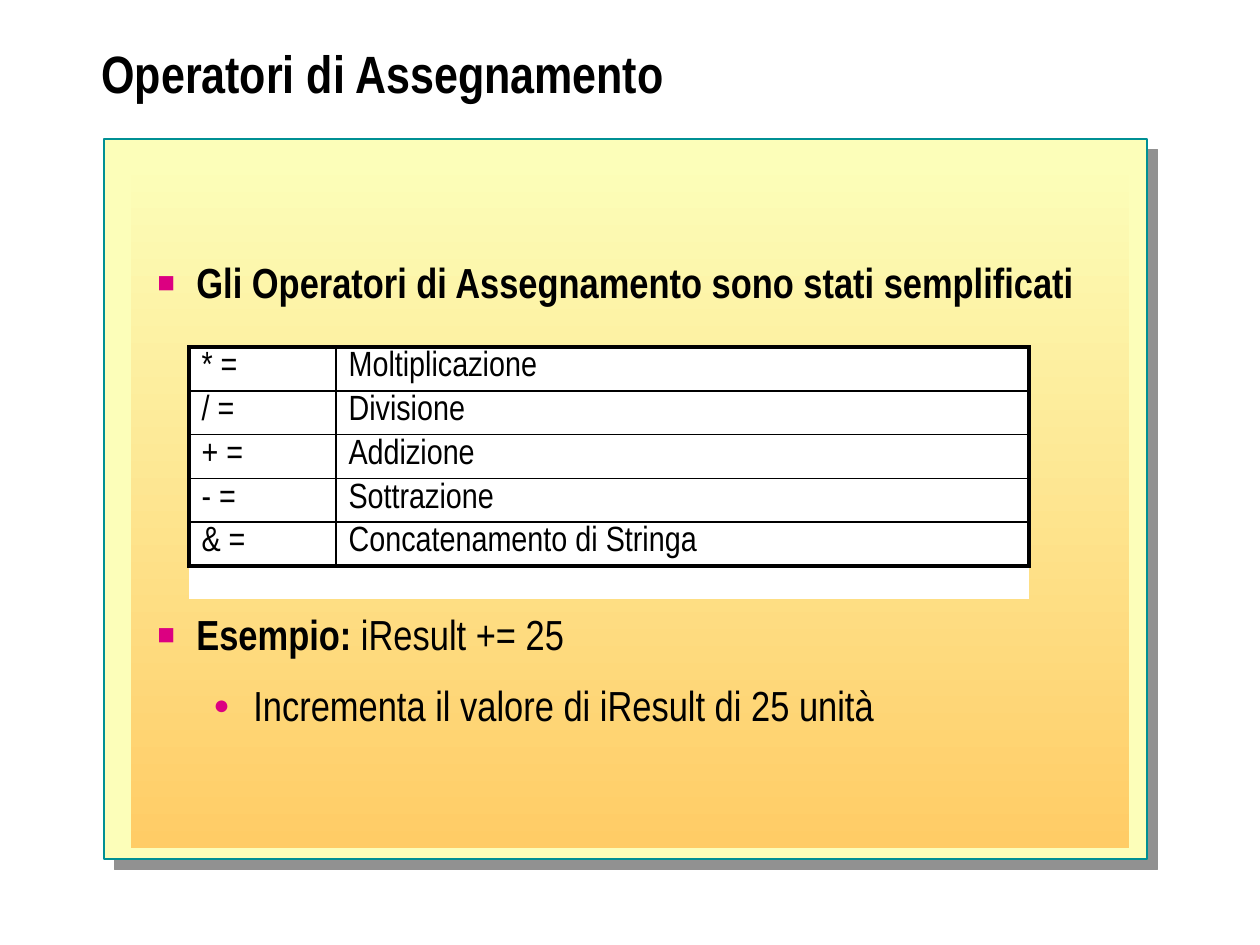
"""Build a slide on assignment operators."""
from lxml import etree
from pptx import Presentation
from pptx import util as u
from pptx.dml.color import RGBColor
from pptx.enum import shapes, text
from pptx.oxml import ns

SCALE = 914400 / 126
FONT = "Arial Narrow"
BULLET_FONT = "Arial"
COLORS = {
    "black": "000000",
    "white": "FFFFFF",
    "cream": "FCFEB9",
    "orange": "FFCC66",
    "teal": "009094",
    "gray": "919191",
    "magenta": "DC0081",
}
OPERATORS = [
    ("* =", "Moltiplicazione"),
    ("/ =", "Divisione"),
    ("+ =", "Addizione"),
    ("- =", "Sottrazione"),
    ("& =", "Concatenamento di Stringa"),
]
COLUMNS = (147, 693)
ROW = 42
BULLETS = [
    ([("Gli Operatori di Assegnamento sono stati semplificati", True)], 0, 0),
    ([("Esempio: ", True), ("iResult += 25", False)], 0, 307),
    ([("Incrementa il valore di iResult di 25 unità", False)], 1, 25),
]
BULLET_STYLES = [("■", 70, 39, -39), ("●", 65, 96, -40)]


def px(value):
    return u.Emu(round(value * SCALE))


def rgb(name):
    return RGBColor.from_string(COLORS[name])


def child(parent, tag, **attributes):
    return etree.SubElement(parent, ns.qn(tag), attributes)


def add_panel(page, place, fill, line=None, end=None):
    panel = page.shapes.add_shape(shapes.MSO_SHAPE.RECTANGLE, *map(px, place))
    panel.shadow.inherit = False
    if end:
        panel.fill.gradient()
        panel.fill.gradient_angle = 270
        for stop, name, position in zip(panel.fill.gradient_stops, (fill, end), (0, 1)):
            stop.color.rgb = rgb(name)
            stop.position = position
    else:
        panel.fill.solid()
        panel.fill.fore_color.rgb = rgb(fill)
    if line:
        panel.line.color.rgb = rgb(line)
        panel.line.width = u.Pt(1)
    else:
        panel.line.fill.background()
    return panel


def drop_shadow(panel):
    effects = panel._element.spPr.find(ns.qn("a:effectLst"))
    shadow = child(effects, "a:outerShdw", blurRad="0", dist=str(u.Pt(8.5)),
                   dir="2700000", algn="ctr", rotWithShape="0")
    child(shadow, "a:srgbClr", val=COLORS["gray"])


def style_span(span, size, bold=False):
    span.font.name = FONT
    span.font.size = u.Pt(size)
    span.font.bold = bold
    span.font.color.rgb = rgb("black")


def add_box(page, place, anchor):
    box = page.shapes.add_textbox(*map(px, place))
    box.text_frame.word_wrap = True
    box.text_frame.vertical_anchor = anchor
    return box.text_frame


def add_title(page, wording):
    frame = add_box(page, (89, 20, 1129, 116), text.MSO_ANCHOR.MIDDLE)
    frame.text = wording
    para = frame.paragraphs[0]
    para.line_spacing = 0.8
    style_span(para.runs[0], 30, True)


def set_bullet(para, level):
    symbol, percent, margin, indent = BULLET_STYLES[level]
    para.level = level
    properties = para._p.get_or_add_pPr()
    properties.set("marL", str(px(margin)))
    properties.set("indent", str(px(indent)))
    color = child(properties, "a:buClr")
    child(color, "a:srgbClr", val=COLORS["magenta"])
    child(properties, "a:buSzPct", val=str(percent * 1000))
    child(properties, "a:buFont", typeface=BULLET_FONT)
    child(properties, "a:buChar", char=symbol)


def add_bullets(page):
    frame = add_box(page, (145, 256, 992, 591), text.MSO_ANCHOR.TOP)
    for index, (spans, level, gap) in enumerate(BULLETS):
        para = frame.add_paragraph() if index else frame.paragraphs[0]
        para.line_spacing = 0.9
        para.space_before = px(gap)
        set_bullet(para, level)
        for wording, bold in spans:
            span = para.add_run()
            span.text = wording
            style_span(span, 24, bold)


def set_borders(cell, outer):
    properties = cell._tc.get_or_add_tcPr()
    for index, side in enumerate("LRTB"):
        width = u.Pt(2.25 if side in outer else 1)
        line = etree.Element(ns.qn(f"a:ln{side}"), w=str(width))
        child(child(line, "a:solidFill"), "a:srgbClr", val=COLORS["black"])
        properties.insert(index, line)


def style_cell(cell, wording, outer):
    cell.text = wording
    cell.fill.background()
    cell.margin_left = cell.margin_right = u.Inches(0.1)
    cell.margin_top, cell.margin_bottom = px(6), px(0)
    para = cell.text_frame.paragraphs[0]
    para.line_spacing = 0.9
    style_span(para.runs[0], 20)
    set_borders(cell, outer)


def add_operators(page):
    count = len(OPERATORS)
    place = (189, 347, sum(COLUMNS), ROW * count)
    table = page.shapes.add_table(count, len(COLUMNS), *map(px, place)).table
    table.first_row = table.horz_banding = False
    for column, width in zip(table.columns, COLUMNS):
        column.width = px(width)
    for index, wordings in enumerate(OPERATORS):
        table.rows[index].height = px(ROW)
        edge = {0: "T", count - 1: "B"}.get(index, "")
        for column, (wording, side) in enumerate(zip(wordings, "LR")):
            style_cell(table.cell(index, column), wording, edge + side)


def main():
    deck = Presentation()
    deck.slide_width, deck.slide_height = px(1260), px(945)
    page = deck.slides.add_slide(deck.slide_layouts[6])
    drop_shadow(add_panel(page, (104, 139, 1043, 720), "cream", line="teal"))
    add_panel(page, (131, 158, 998, 690), "cream", end="orange")
    add_panel(page, (189, 347, 840, 252), "white")
    add_title(page, "Operatori di Assegnamento")
    add_bullets(page)
    add_operators(page)
    deck.save("out.pptx")


if __name__ == "__main__":
    main()
